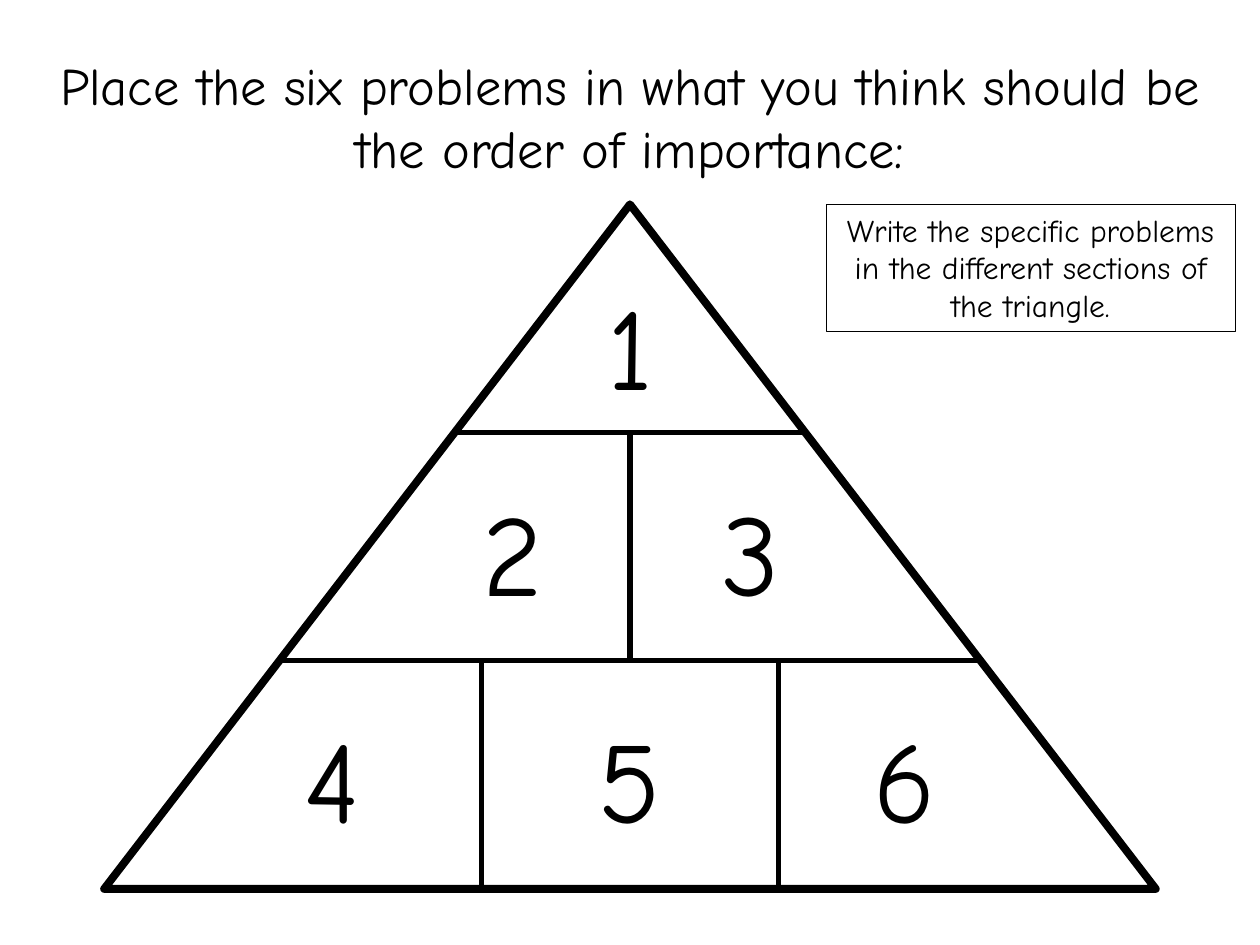
from dataclasses import dataclass

import pptx
import pptx.dml.color
import pptx.enum.shapes
import pptx.enum.text
import pptx.oxml.ns
import pptx.util
from lxml import etree

Cm, Pt = pptx.util.Cm, pptx.util.Pt
BLACK = pptx.dml.color.RGBColor(0x00, 0x00, 0x00)
WHITE = pptx.dml.color.RGBColor(0xFF, 0xFF, 0xFF)
FONT = "Comic Neue"

# Triangle geometry in centimetres
CENTER_X = 12.7
APEX_Y = 4.12
ROW_HEIGHT = 4.6
ROW_COUNT = 3
BASE_WIDTH = 21.2
HEIGHT = ROW_HEIGHT * ROW_COUNT
NUMBER_WIDTH, NUMBER_HEIGHT = 3.2, 3.07


@dataclass(frozen=True)
class Row:
    numbers: dict[str, float]  # number -> centre of its section
    number_top: float
    dividers: tuple[float, ...]


ROWS = [
    Row({"1": CENTER_X}, 5.41, ()),
    Row({"2": 10.34, "3": 15.14}, 9.58, (CENTER_X,)),
    Row({"4": 6.71, "5": CENTER_X, "6": 18.24}, 14.14, (CENTER_X - 3, CENTER_X + 3)),
]


def write(shape, text: str, *, size: float,
          anchor=pptx.enum.text.MSO_ANCHOR.TOP) -> None:
    frame = shape.text_frame
    frame.word_wrap = True
    frame.auto_size = pptx.enum.text.MSO_AUTO_SIZE.NONE
    frame.vertical_anchor = anchor
    paragraph = frame.paragraphs[0]
    paragraph.alignment = pptx.enum.text.PP_ALIGN.CENTER
    run = paragraph.add_run()
    run.text = text
    run.font.name = FONT
    run.font.size = Pt(size)
    run.font.color.rgb = BLACK


def draw_line(slide, x1: float, y1: float, x2: float, y2: float) -> None:
    line = slide.shapes.add_connector(
        pptx.enum.shapes.MSO_CONNECTOR.STRAIGHT, Cm(x1), Cm(y1), Cm(x2), Cm(y2))
    line.line.color.rgb = BLACK
    line.line.width = Pt(3)
    properties = line._element.spPr
    etree.SubElement(properties, pptx.oxml.ns.qn("a:effectLst"))


def draw_outline(slide, preset, left: float, top: float, width: float,
                 height: float, weight: float):
    shape = slide.shapes.add_shape(preset, Cm(left), Cm(top), Cm(width), Cm(height))
    shape.shadow.inherit = False
    shape.fill.solid()
    shape.fill.fore_color.rgb = WHITE
    shape.line.color.rgb = BLACK
    shape.line.width = Pt(weight)
    return shape


def draw_row(slide, index: int, row: Row) -> None:
    top = APEX_Y + index * ROW_HEIGHT
    if index:
        half_width = BASE_WIDTH / 2 * index / ROW_COUNT
        draw_line(slide, CENTER_X - half_width, top, CENTER_X + half_width, top)
    for x in row.dividers:
        draw_line(slide, x, top, x, top + ROW_HEIGHT)
    for number, center in row.numbers.items():
        label = slide.shapes.add_textbox(
            Cm(center - NUMBER_WIDTH / 2), Cm(row.number_top),
            Cm(NUMBER_WIDTH), Cm(NUMBER_HEIGHT))
        write(label, number, size=66)


def main() -> None:
    presentation = pptx.Presentation()
    presentation.slide_width, presentation.slide_height = Cm(25.4), Cm(19.05)
    slide = presentation.slides.add_slide(presentation.slide_layouts[5])

    # Title
    title = slide.shapes.title
    title.left, title.top, title.width, title.height = Cm(0.5), Cm(0.53), Cm(24.4), Cm(3.6)
    write(title, "Place the six problems in what you think should be the order of importance:",
          size=30, anchor=pptx.enum.text.MSO_ANCHOR.MIDDLE)

    # Triangle with its numbered sections
    shapes = pptx.enum.shapes.MSO_SHAPE
    draw_outline(slide, shapes.ISOSCELES_TRIANGLE, CENTER_X - BASE_WIDTH / 2, APEX_Y,
                 BASE_WIDTH, HEIGHT, 4.5)
    for index, row in enumerate(ROWS):
        draw_row(slide, index, row)

    # Instruction
    instruction = draw_outline(slide, shapes.RECTANGLE, 16.65, APEX_Y, 8.25, 2.56, 0.25)
    instruction.fill.background()
    write(instruction, "Write the specific problems in the different sections of the triangle.",
          size=18)

    presentation.save("out.pptx")


if __name__ == "__main__":
    main()
